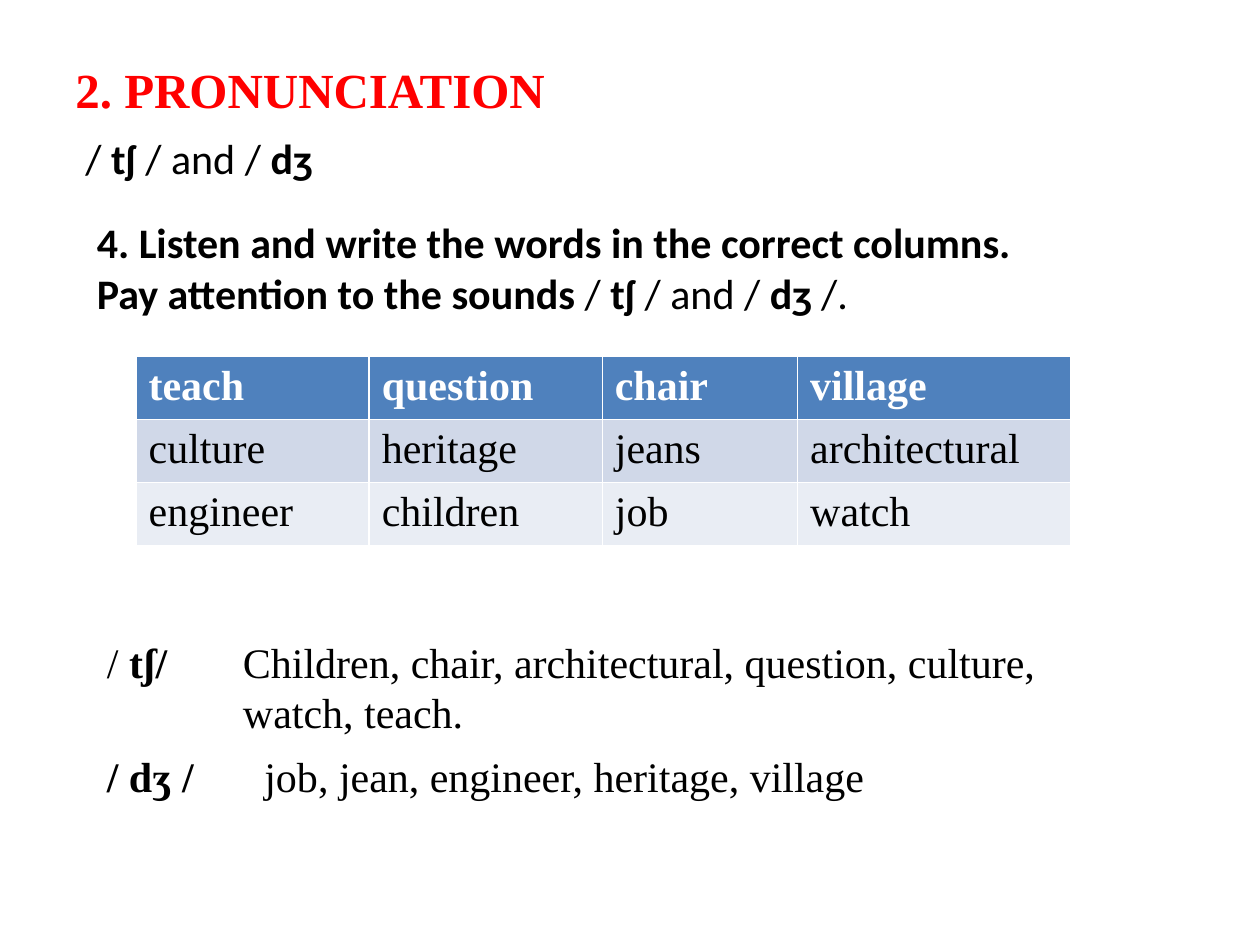
"""Build the pronunciation slide with its word table and answers."""
import pptx
import pptx.dml.color
import pptx.enum.text
import pptx.util

Inches = pptx.util.Inches
SERIF, SANS = "Times New Roman", "Calibri"
BLACK, WHITE, RED = "000000", "FFFFFF", "FF0000"

TEXTS = [
    ((0.5, 0.42, 4, 0.57), SERIF, 28, RED, [("2. PRONUNCIATION", True)]),
    ((0.58, 1, 2.33, 0.5), SANS, 24, BLACK,
     [("/ ", False), ("tʃ", True), (" / and / ", False), ("dʒ", True)]),
    ((0.67, 1.67, 7.8, 0.91), SANS, 24, BLACK,
     [("4. Listen and write the words in the correct columns. "
       "Pay attention to the sounds", True),
      (" / ", False), ("tʃ", True), (" / and / ", False),
      ("dʒ ", True), ("/.", False)]),
    ((0.75, 5, 0.75, 0.5), SERIF, 24, BLACK, [("/ ", False), ("tʃ/", True)]),
    ((1.83, 5, 7.25, 0.91), SERIF, 24, BLACK,
     [("Children, chair, architectural, question, culture, watch, teach.", False)]),
    ((0.75, 5.91, 1, 0.5), SERIF, 24, BLACK, [("/ dʒ /", True)]),
    ((2, 5.91, 7, 0.5), SERIF, 24, BLACK,
     [("job, jean, engineer, heritage, village", False)]),
]
WORDS = [
    ("teach", "question", "chair", "village"),
    ("culture", "heritage", "jeans", "architectural"),
    ("engineer", "children", "job", "watch"),
]
ROW_STYLES = [("4F81BD", WHITE, True), ("D0D8E8", BLACK, False), ("E9EDF4", BLACK, False)]
COLUMN_WIDTHS = (1.85, 1.85, 1.55, 2.17)
ROW_HEIGHT = 0.5


def rgb(value):
    return pptx.dml.color.RGBColor.from_string(value)


def add_run(paragraph, text, font, size, color, bold):
    run = paragraph.add_run()
    run.text = text
    for name, value in {"name": font, "size": pptx.util.Pt(size), "bold": bold}.items():
        setattr(run.font, name, value)
    run.font.color.rgb = rgb(color)


def add_text(slide, place, font, size, color, runs):
    frame = slide.shapes.add_textbox(*map(Inches, place)).text_frame
    frame.word_wrap = True
    frame.auto_size = pptx.enum.text.MSO_AUTO_SIZE.SHAPE_TO_FIT_TEXT
    for text, bold in runs:
        add_run(frame.paragraphs[0], text, font, size, color, bold)


def add_words(slide):
    place = (1.08, 2.83, sum(COLUMN_WIDTHS), ROW_HEIGHT * len(WORDS))
    table = slide.shapes.add_table(
        len(WORDS), len(COLUMN_WIDTHS), *map(Inches, place)).table
    for column, width in zip(table.columns, COLUMN_WIDTHS):
        column.width = Inches(width)
    for row, words, (fill, color, bold) in zip(table.rows, WORDS, ROW_STYLES):
        row.height = Inches(ROW_HEIGHT)
        for cell, word in zip(row.cells, words):
            cell.fill.solid()
            cell.fill.fore_color.rgb = rgb(fill)
            add_run(cell.text_frame.paragraphs[0], word, SERIF, 24, color, bold)


def main():
    deck = pptx.Presentation()
    deck.slide_width, deck.slide_height = Inches(10), Inches(7.5)
    slide = deck.slides.add_slide(deck.slide_layouts[6])
    for text in TEXTS:
        add_text(slide, *text)
    add_words(slide)
    deck.save("out.pptx")


if __name__ == "__main__":
    main()
